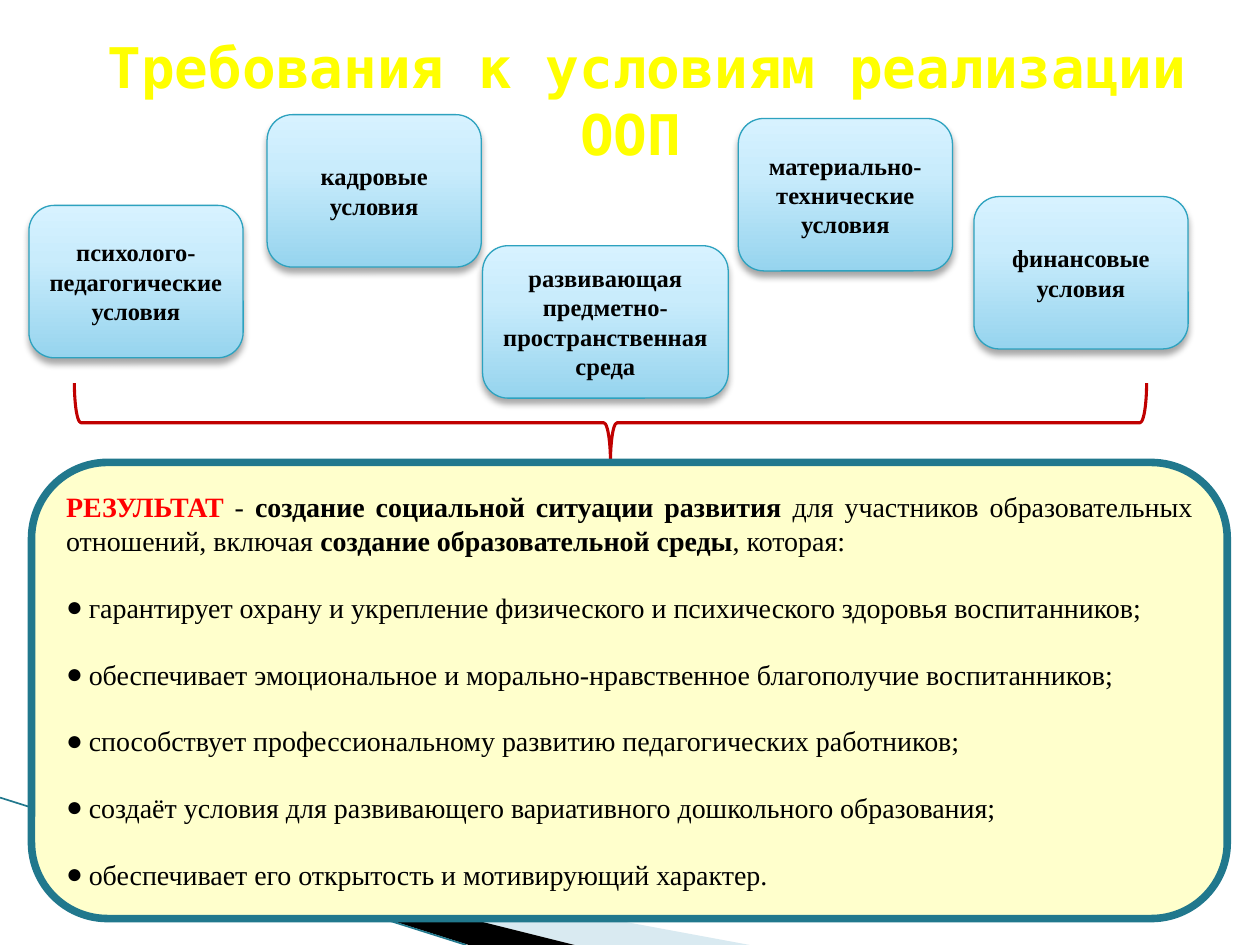
from dataclasses import dataclass

from lxml import etree
from pptx import Presentation
from pptx.dml.color import RGBColor
from pptx.enum.shapes import MSO_CONNECTOR, MSO_SHAPE
from pptx.enum.text import MSO_ANCHOR, PP_ALIGN
from pptx.oxml import parse_xml
from pptx.oxml.ns import nsdecls, qn
from pptx.util import Inches, Pt

CENTER, JUSTIFY = PP_ALIGN.CENTER, PP_ALIGN.JUSTIFY
TOP, MIDDLE = MSO_ANCHOR.TOP, MSO_ANCHOR.MIDDLE
ROUNDED, BRACE = MSO_SHAPE.ROUNDED_RECTANGLE, MSO_SHAPE.LEFT_BRACE
STRAIGHT = MSO_CONNECTOR.STRAIGHT
TITLE_ONLY = 5
SLIDE_WIDTH, SLIDE_HEIGHT = 10, 7.5


@dataclass(frozen=True)
class Theme:
    title_font: str = "DejaVu Sans Mono"
    body_font: str = "Times New Roman"
    title_size: float = 32
    result_size: float = 16
    card_size: float = 14
    paragraph_gap: float = 19
    bullet_indent: float = 0.18
    title: str = "FFFF00"
    text: str = "000000"
    accent: str = "FF0000"
    brace: str = "C00000"
    panel: str = "FFFFCC"
    frame: str = "21788D"
    card_line: str = "2DA2BF"
    card_stops: tuple = ((0, "96D4EE"), (65, "C9ECFC"), (100, "D7F2FF"))
    wedge: str = "A0CBDC"


@dataclass(frozen=True)
class Box:
    left: float
    top: float
    width: float
    height: float

    def place(self):
        return [Inches(length) for length in (self.left, self.top, self.width, self.height)]


THEME = Theme()
CARD_WIDTH, CARD_HEIGHT = 1.7, 1.21
CARDS = [
    (0.23, 1.63, CARD_WIDTH, ["психолого-педагогические условия"]),
    (2.12, 0.91, CARD_WIDTH, ["кадровые", "условия"]),
    (5.86, 0.94, CARD_WIDTH, ["материально-технические", "условия"]),
    (7.73, 1.56, CARD_WIDTH, ["финансовые", "условия"]),
    (3.83, 1.95, 1.95, ["развивающая", "предметно-пространственная среда"]),
]
RESULT_LEAD = [
    ("РЕЗУЛЬТАТ", True, THEME.accent),
    (" - ", False, THEME.text),
    ("создание социальной ситуации развития ", True, THEME.text),
    ("для участников образовательных отношений, включая ", False, THEME.text),
    ("создание образовательной среды", True, THEME.text),
    (", которая:", False, THEME.text),
]
RESULT_POINTS = [
    "гарантирует охрану и укрепление физического и психического здоровья воспитанников;",
    "обеспечивает эмоциональное и морально-нравственное благополучие воспитанников;",
    "способствует профессиональному развитию педагогических работников;",
    "создаёт условия для развивающего вариативного дошкольного образования;",
    "обеспечивает его открытость и мотивирующий характер.",
]


def rgb(color):
    return RGBColor.from_string(color)


def style_run(run, font, size, color, bold=False):
    run.font.name, run.font.size, run.font.bold = font, Pt(size), bold
    run.font.color.rgb = rgb(color)


def set_line(shape, color, width):
    shape.line.color.rgb = rgb(color)
    shape.line.width = Pt(width)


def add_shape(slide, kind, box):
    shape = slide.shapes.add_shape(kind, *box.place())
    shape.shadow.inherit = False
    return shape


def add_title(slide, box, text):
    title = slide.shapes.title
    title.left, title.top, title.width, title.height = box.place()
    frame = title.text_frame
    frame.text = text
    frame.word_wrap, frame.vertical_anchor = True, TOP
    paragraph = frame.paragraphs[0]
    paragraph.alignment = CENTER
    style_run(paragraph.runs[0], THEME.title_font, THEME.title_size, THEME.title, True)


def add_wedge(slide, points, color, opacity=100):
    start, *others = [(Inches(x), Inches(y)) for x, y in points]
    builder = slide.shapes.build_freeform(*start)
    builder.add_line_segments(others, close=True)
    wedge = builder.convert_to_shape()
    wedge.shadow.inherit = False
    wedge.fill.solid()
    wedge.fill.fore_color.rgb = rgb(color)
    wedge.line.fill.background()
    if opacity < 100:
        color_element = wedge.fill._xPr.find(qn("a:solidFill"))[0]
        etree.SubElement(color_element, qn("a:alpha"), val=str(opacity * 1000))


def add_corner(slide, box):
    """Place the two wedges and the slanted line at the bottom left."""
    right, bottom = box.left + box.width, box.top + box.height
    start = (0.55, 6.5)
    add_wedge(slide, [start, (right, bottom), (4.56, bottom)], THEME.wedge, 40)
    add_wedge(slide, [start, (4.56, bottom), (3.72, bottom)], THEME.text)
    line = slide.shapes.add_connector(
        STRAIGHT, Inches(box.left), Inches(box.top), Inches(3.7), Inches(bottom))
    set_line(line, THEME.frame, 0.95)
    etree.SubElement(line._element.spPr, qn("a:effectLst"))


def add_brace(slide, box):
    """Fill the box with a brace turned to point down."""
    turned = Box(box.left + (box.width - box.height) / 2,
                 box.top + (box.height - box.width) / 2, box.height, box.width)
    brace = add_shape(slide, BRACE, turned)
    brace.rotation = 270
    brace.fill.background()
    set_line(brace, THEME.brace, 1.75)


def add_bullet(paragraph):
    properties = paragraph._p.get_or_add_pPr()
    indent = Inches(THEME.bullet_indent)
    properties.set("marL", str(indent))
    properties.set("indent", str(-indent))
    etree.SubElement(properties, qn("a:buFont"), typeface=THEME.body_font)
    etree.SubElement(properties, qn("a:buChar"), char="●")


def add_result(slide, box):
    panel = add_shape(slide, ROUNDED, box)
    panel.fill.solid()
    panel.fill.fore_color.rgb = rgb(THEME.panel)
    set_line(panel, THEME.frame, 4.33)
    frame = panel.text_frame
    frame.word_wrap, frame.vertical_anchor = True, MIDDLE
    lead = frame.paragraphs[0]
    lead.alignment = JUSTIFY
    for text, bold, color in RESULT_LEAD:
        run = lead.add_run()
        run.text = text
        style_run(run, THEME.body_font, THEME.result_size, color, bold)
    for point in RESULT_POINTS:
        paragraph = frame.add_paragraph()
        paragraph.text = point
        paragraph.alignment = JUSTIFY
        paragraph.space_before = Pt(THEME.paragraph_gap)
        add_bullet(paragraph)
        style_run(paragraph.runs[0], THEME.body_font, THEME.result_size, THEME.text)


def add_card_effects(card):
    """Give the card its three-stop gradient and soft shadow."""
    stops = "".join(f'<a:gs pos="{share * 1000}"><a:srgbClr val="{color}"/></a:gs>'
                    for share, color in THEME.card_stops)
    properties = card._element.spPr
    properties.find(qn("a:prstGeom")).addnext(parse_xml(
        f'<a:gradFill {nsdecls("a")}><a:gsLst>{stops}</a:gsLst>'
        '<a:lin ang="16200000" scaled="0"/></a:gradFill>'))
    properties.find(qn("a:effectLst")).append(parse_xml(
        f'<a:outerShdw {nsdecls("a")} blurRad="{Pt(4)}" dist="{Pt(3)}" dir="5400000" '
        'rotWithShape="0"><a:srgbClr val="000000"><a:alpha val="35000"/></a:srgbClr>'
        '</a:outerShdw>'))


def add_card(slide, box, lines):
    card = add_shape(slide, ROUNDED, box)
    set_line(card, THEME.card_line, 0.75)
    add_card_effects(card)
    frame = card.text_frame
    frame.text = "\n".join(lines)
    frame.word_wrap, frame.vertical_anchor = True, MIDDLE
    for paragraph in frame.paragraphs:
        paragraph.alignment = CENTER
        style_run(paragraph.runs[0], THEME.body_font, THEME.card_size, THEME.text, True)


def main():
    presentation = Presentation()
    presentation.slide_width, presentation.slide_height = Inches(SLIDE_WIDTH), Inches(SLIDE_HEIGHT)
    slide = presentation.slides.add_slide(presentation.slide_layouts[TITLE_ONLY])
    add_corner(slide, Box(0, 6.33, 5.95, SLIDE_HEIGHT - 6.33))
    add_title(slide, Box(0.36, 0.21, 9.56, 0.64), "Требования к условиям реализации ООП ")
    add_brace(slide, Box(0.59, 3.04, 8.51, 0.63))
    add_result(slide, Box(0.25, 3.67, 9.49, 3.62))
    for left, top, width, lines in CARDS:
        add_card(slide, Box(left, top, width, CARD_HEIGHT), lines)
    presentation.save("out.pptx")


if __name__ == "__main__":
    main()
